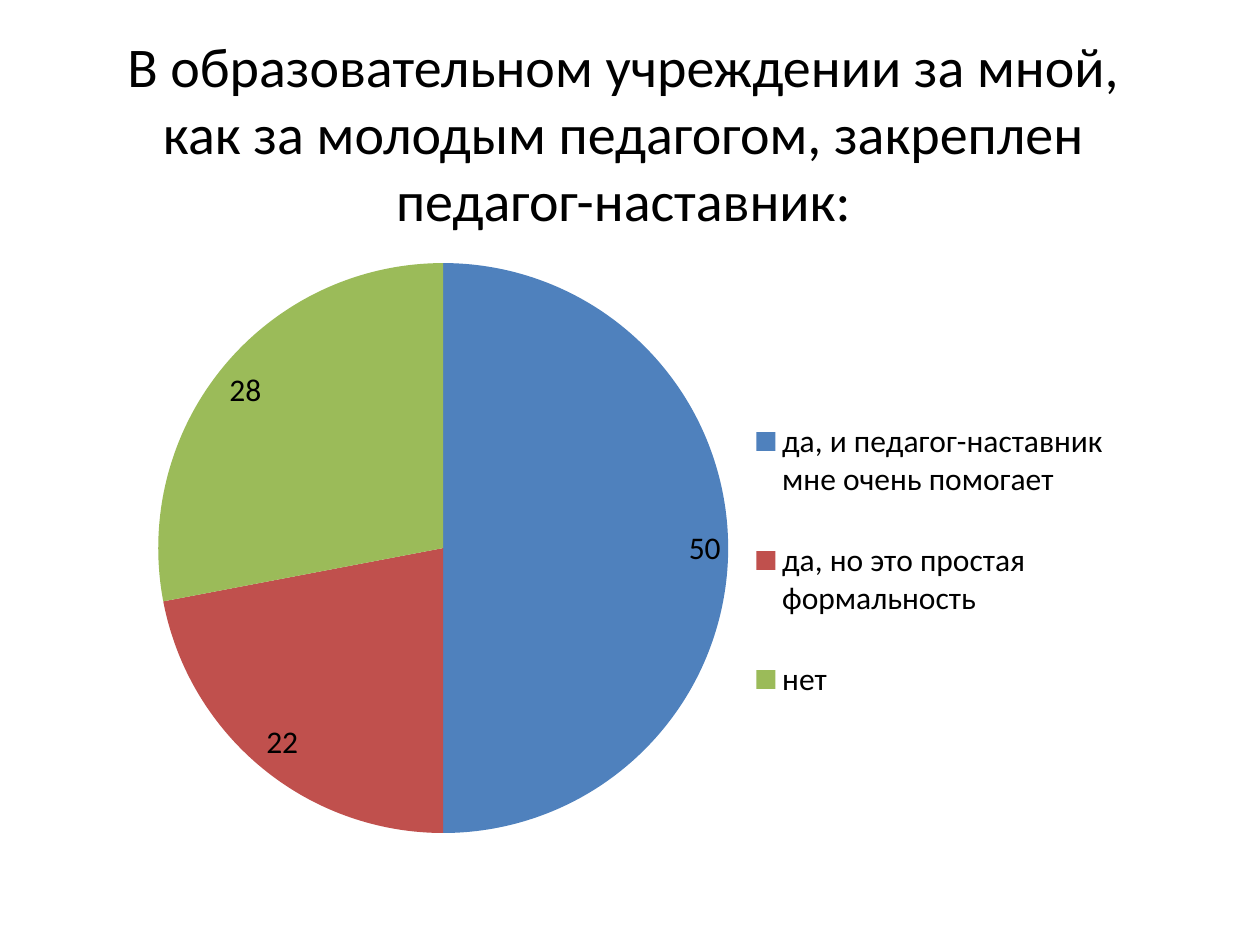
from lxml import etree
from pptx import Presentation
from pptx.chart.data import CategoryChartData
from pptx.dml.color import RGBColor
from pptx.enum.chart import XL_CHART_TYPE, XL_LABEL_POSITION, XL_LEGEND_POSITION
from pptx.enum.text import MSO_ANCHOR, PP_ALIGN
from pptx.oxml.ns import qn
from pptx.util import Inches, Pt

PIE = XL_CHART_TYPE.PIE
INSIDE_END = XL_LABEL_POSITION.INSIDE_END
LEGEND_RIGHT = XL_LEGEND_POSITION.RIGHT
MIDDLE = MSO_ANCHOR.MIDDLE
CENTER = PP_ALIGN.CENTER

WIDTH, HEIGHT = Inches(10), Inches(7.5)
FONT = "Calibri"
TITLE = ("В образовательном учреждении за мной, как за молодым педагогом, "
         "закреплен педагог-наставник:")
ANSWERS = [
    ("да, и педагог-наставник мне очень помогает ", 50, "4F81BD"),
    ("да, но это простая формальность", 22, "C0504D"),
    ("нет", 28, "9BBB59"),
]


def rgb(value):
    return RGBColor.from_string(value)


def box(x, y, w, h):
    """Turn shares of the slide's size into lengths."""
    return int(x * WIDTH), int(y * HEIGHT), int(w * WIDTH), int(h * HEIGHT)


def format_font(font, size, color="000000"):
    font.name, font.size = FONT, Pt(size)
    font.color.rgb = rgb(color)


def write_text(sp, text, size=18, color="000000", align=CENTER, anchor=MIDDLE):
    tf = sp.text_frame
    tf.word_wrap = True
    tf.vertical_anchor = anchor
    p = tf.paragraphs[0]
    p.alignment = align
    r = p.add_run()
    r.text = text
    format_font(r.font, size, color)


def add_title(s, text, area):
    sp = s.shapes.title
    sp.left, sp.top, sp.width, sp.height = area
    write_text(sp, text, size=32)


def set_layout(parent, after, x, y, w, h, inner=False):
    """Place a chart part by shares of the chart's size."""
    for old in parent.findall(qn("c:layout")):
        parent.remove(old)
    layout = etree.Element(qn("c:layout"))
    manual = etree.SubElement(layout, qn("c:manualLayout"))
    values = {"xMode": "edge", "yMode": "edge", "x": x, "y": y, "w": w, "h": h}
    if inner:
        values = {"layoutTarget": "inner", **values}
    for name, value in values.items():
        etree.SubElement(manual, qn(f"c:{name}")).set("val", str(value))
    if after is None:
        parent.insert(0, layout)
    else:
        after.addnext(layout)


def add_pie(s, answers, area):
    names, values, colors = zip(*answers)
    data = CategoryChartData()
    data.categories = names
    data.add_series("Series 1", values)
    chart = s.shapes.add_chart(PIE, *area, data).chart
    chart.has_title = False
    format_font(chart.font, 18)

    plot = chart.plots[0]
    plot.vary_by_categories = True
    for i, color in enumerate(colors):
        fill = plot.series[0].points[i].format.fill
        fill.solid()
        fill.fore_color.rgb = rgb(color)
    plot.has_data_labels = True
    labels = plot.data_labels
    labels.show_value, labels.show_percentage = True, False
    labels.position = INSIDE_END
    format_font(labels.font, 18)

    chart.has_legend = True
    legend = chart.legend
    legend.position = LEGEND_RIGHT
    legend.include_in_layout = False
    format_font(legend.font, 18)

    plot_area = chart.element.find(".//" + qn("c:plotArea"))
    set_layout(plot_area, None, 0.02, 0.04, 0.58, 0.92, inner=True)
    legend_xml = chart.element.find(".//" + qn("c:legend"))
    set_layout(legend_xml, legend_xml.find(qn("c:legendPos")), 0.62, 0.23, 0.37, 0.58)


def main():
    prs = Presentation()
    prs.slide_width, prs.slide_height = WIDTH, HEIGHT
    s = prs.slides.add_slide(prs.slide_layouts[5])
    add_title(s, TITLE, box(0.07, 0.04, 0.85, 0.2))
    add_pie(s, ANSWERS, box(0.11, 0.25, 0.78, 0.66))
    prs.save("out.pptx")


if __name__ == "__main__":
    main()
